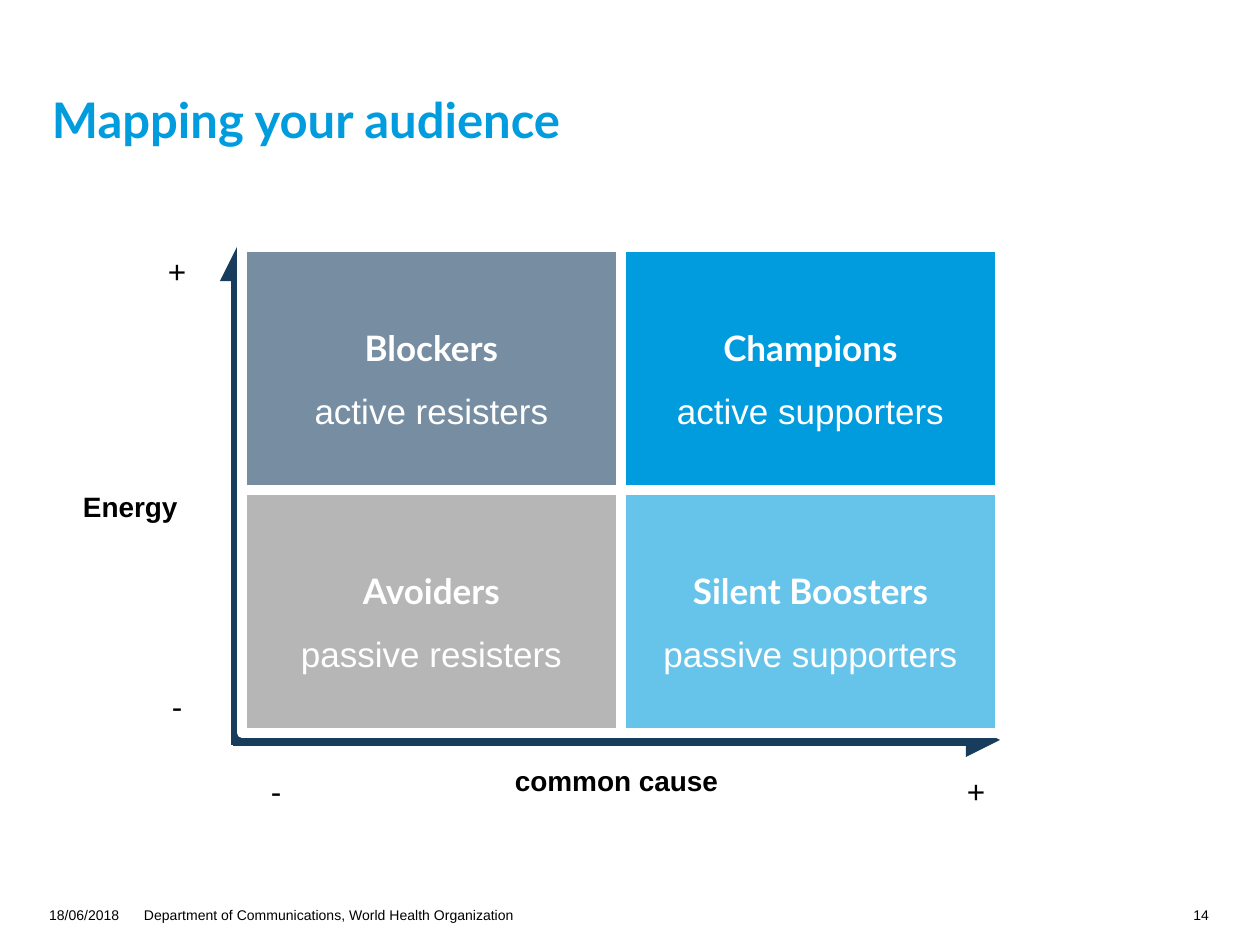
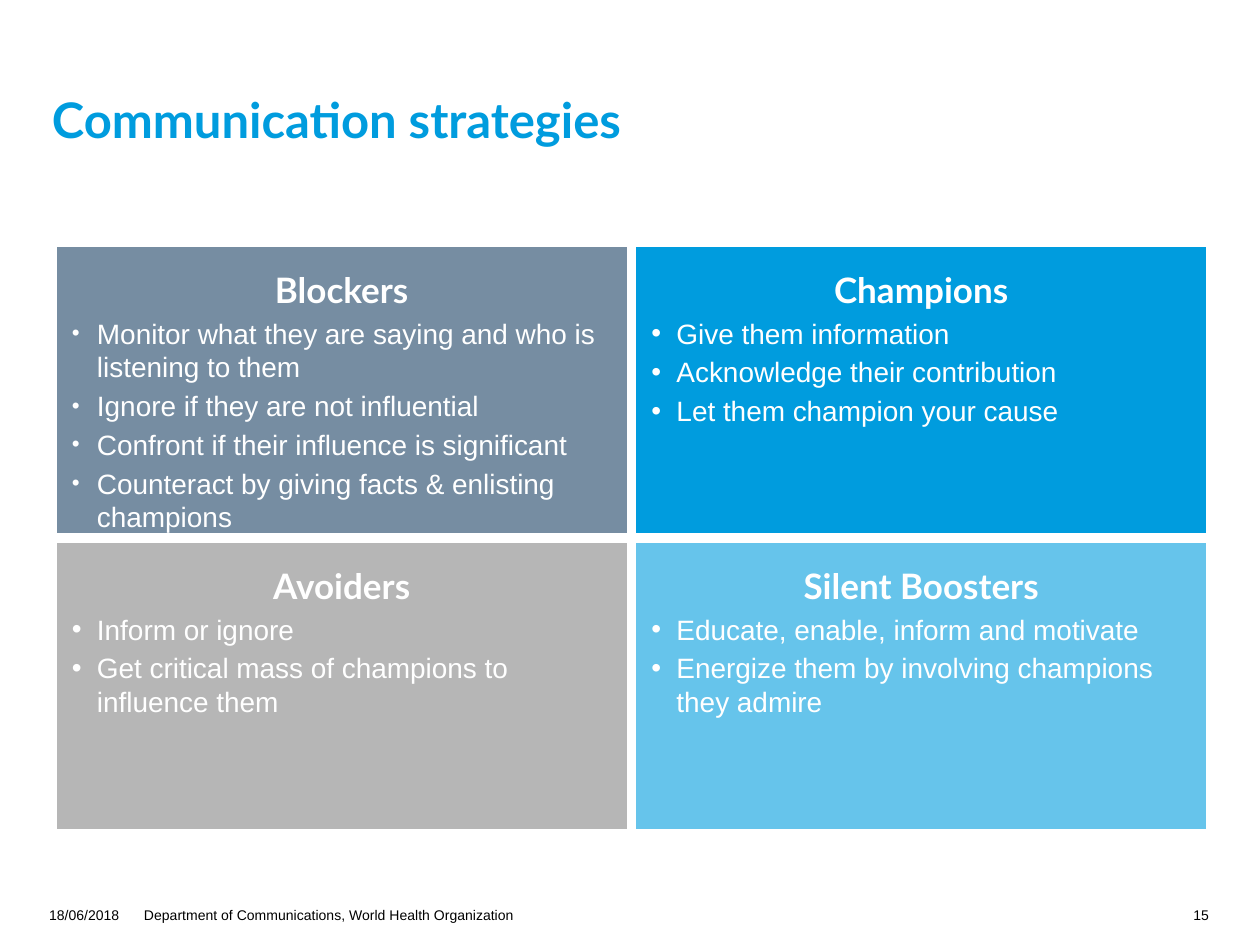
import lxml.etree
import pptx
import pptx.dml.color
import pptx.enum.shapes
import pptx.enum.text
import pptx.oxml.ns
import pptx.util

PIXELS_PER_INCH = 126
BLUE, NAVY, WHITE, BLACK = "009CDE", "183C5C", "FFFFFF", "000000"
HEADING_FONT, BODY_FONT = "Lato", "Arial"
ALIGN = pptx.enum.text.PP_ALIGN
ANCHOR = pptx.enum.text.MSO_ANCHOR
GROUPS = [
    {"name": "Blockers", "colour": "768DA2", "attitude": "active resisters",
     "bullet_percent": 80, "list_height": 229,
     "strategies": ["Monitor what they are saying and who is listening to them",
                    "Ignore if they are not influential",
                    "Confront if their influence is significant",
                    "Counteract by giving facts & enlisting champions"]},
    {"name": "Champions", "colour": BLUE, "attitude": "active supporters",
     "bullet_percent": 100, "list_height": 122,
     "strategies": ["Give them information", "Acknowledge their contribution",
                    "Let them champion your cause"]},
    {"name": "Avoiders", "colour": "B6B6B6", "attitude": "passive resisters",
     "bullet_percent": 100, "list_height": 117,
     "strategies": ["Inform or ignore",
                    "Get critical mass of champions to influence them"]},
    {"name": "Silent Boosters", "colour": "66C4EB", "attitude": "passive supporters",
     "bullet_percent": 100, "list_height": 117,
     "strategies": ["Educate, enable, inform and motivate",
                    "Energize them by involving champions they admire"]},
]


def px(length):
    """Turn pixels into EMU."""
    return pptx.util.Emu(round(length * pptx.util.Inches(1) / PIXELS_PER_INCH))


def rgb(colour):
    """Turn a hex string into a colour."""
    return pptx.dml.color.RGBColor.from_string(colour)


def add_child(parent, tag, **attributes):
    """Append a drawing element to an XML parent."""
    return lxml.etree.SubElement(parent, pptx.oxml.ns.qn(tag), attributes)


def place(shape, box):
    """Move and size a shape to a pixel box."""
    shape.left, shape.top, shape.width, shape.height = map(px, box)


def set_frame(shape, insets, anchor=ANCHOR.TOP):
    """Set the wrapping, insets and anchor of a shape's text."""
    frame = shape.text_frame
    frame.word_wrap = True
    frame.auto_size = pptx.enum.text.MSO_AUTO_SIZE.NONE
    frame.vertical_anchor = anchor
    (frame.margin_left, frame.margin_top,
     frame.margin_right, frame.margin_bottom) = map(px, insets)


def write(shape, text, size=16, font=BODY_FONT, colour=BLACK, bold=False,
          align=ALIGN.LEFT, line_spacing=1.0, space_before=0, bullet_percent=None):
    """Write one formatted paragraph into a shape."""
    frame = shape.text_frame
    first = not frame.text
    paragraph = frame.paragraphs[0] if first else frame.add_paragraph()
    paragraph.alignment = align
    paragraph.line_spacing = line_spacing
    paragraph.space_before = pptx.util.Pt(0 if first else space_before)
    if bullet_percent:
        add_bullet(paragraph, bullet_percent, colour)
    run = paragraph.add_run()
    run.text = text
    run.font.size = pptx.util.Pt(size)
    run.font.name = font
    run.font.bold = bold
    run.font.color.rgb = rgb(colour)


def add_bullet(paragraph, percent, colour):
    """Give a paragraph a round bullet with a hanging indent."""
    properties = paragraph._p.get_or_add_pPr()
    properties.set("marL", str(px(25)))
    properties.set("indent", str(px(-25)))
    add_child(add_child(properties, "a:buClr"), "a:srgbClr", val=colour)
    add_child(properties, "a:buSzPct", val=str(percent * 1000))
    add_child(properties, "a:buFont", typeface=BODY_FONT)
    add_child(properties, "a:buChar", char="•")


def add_label(slide, box, text, insets=(11, 5, 11, 5), **text_format):
    """Add a text box with one paragraph."""
    label = slide.shapes.add_textbox(*map(px, box))
    set_frame(label, insets)
    write(label, text, **text_format)


def add_slide(presentation, layout_index, title, number):
    """Add a slide with its title and footer."""
    slide = presentation.slides.add_slide(presentation.slide_layouts[layout_index])
    heading = slide.shapes.title
    place(heading, (49, 49, 843, 100))
    set_frame(heading, (3, 0, 49, 0), ANCHOR.BOTTOM)
    write(heading, title, size=28, font=HEADING_FONT, colour=BLUE, bold=True,
          line_spacing=0.9)
    footers = [(49, 82, "18/06/2018", ALIGN.LEFT),
               (144, 539, "Department of Communications, World Health Organization",
                ALIGN.LEFT),
               (1179, 30, str(number), ALIGN.RIGHT)]
    for left, width, text, align in footers:
        add_label(slide, (left, 907, width, 25), text, insets=(0, 0, 0, 0),
                  size=8, align=align)
    return slide


def add_axis(slide, start, end):
    """Add a thick axis with an arrowhead at its end."""
    axis = slide.shapes.add_connector(
        pptx.enum.shapes.MSO_CONNECTOR.STRAIGHT, *map(px, start + end))
    axis.line.color.rgb = rgb(NAVY)
    axis.line.width = pptx.util.Pt(6.5)
    add_child(axis.line._get_or_add_ln(), "a:tailEnd", type="triangle")
    add_child(axis._element.spPr, "a:effectLst")


def add_quadrants(slide, box, anchor):
    """Fill a box with the named groups, two by two, and return their cells."""
    left, top, width, height = box
    cell_width, cell_height = width / 2, height / 2
    cells = []
    for index, group in enumerate(GROUPS):
        row, column = divmod(index, 2)
        cell = slide.shapes.add_shape(
            pptx.enum.shapes.MSO_SHAPE.RECTANGLE,
            px(left + column * cell_width), px(top + row * cell_height),
            px(cell_width), px(cell_height))
        cell.shadow.inherit = False
        cell.fill.solid()
        cell.fill.fore_color.rgb = rgb(group["colour"])
        cell.line.color.rgb = rgb(WHITE)
        cell.line.width = pptx.util.Pt(5.25)
        set_frame(cell, (13, 6, 13, 6), anchor)
        write(cell, group["name"], size=20, font=HEADING_FONT, colour=WHITE,
              bold=True, align=ALIGN.CENTER, line_spacing=1.5)
        cells.append(cell)
    return cells


def add_audience_map(slide, box):
    """Draw the quadrants in a box with both axes and their labels."""
    left, top, width, height = box
    right, bottom = left + width, top + height
    add_axis(slide, (left - 5, bottom + 12), (left - 5, top))
    add_axis(slide, (left - 9, bottom + 7), (right, bottom + 7))
    add_label(slide, (left - 170, top + 238, 165, 71), "Energy", bold=True)
    add_label(slide, (left + 229, bottom + 26, 291, 71), "common cause",
              bold=True, align=ALIGN.CENTER)
    for cell, group in zip(add_quadrants(slide, box, ANCHOR.MIDDLE), GROUPS):
        write(cell, group["attitude"], size=20, colour=WHITE,
              align=ALIGN.CENTER, line_spacing=1.5)
    signs = [("-", left - 87, bottom - 51), ("-", left + 12, bottom + 34),
             ("+", right - 46, bottom + 34), ("+", left - 87, top)]
    for sign, sign_left, sign_top in signs:
        add_label(slide, (sign_left, sign_top, 44, 50), sign, size=18,
                  align=ALIGN.CENTER)


def add_strategy_lists(slide, box):
    """Draw the quadrants in a box and lay a bulleted list over each."""
    cells = add_quadrants(slide, box, ANCHOR.TOP)
    bodies = [body for body in slide.placeholders if body.placeholder_format.idx]
    for cell, group, body in zip(cells, GROUPS, bodies):
        cell._element.getparent().append(body._element)
        place(body, (0, 0, 576, group["list_height"]))
        body.left, body.top = cell.left, cell.top + px(64)
        set_frame(body, (20, 10, 10, 5))
        for strategy in group["strategies"]:
            write(body, strategy, colour=WHITE, space_before=3,
                  bullet_percent=group["bullet_percent"])


def main():
    """Build and save both slides."""
    presentation = pptx.Presentation()
    presentation.slide_width, presentation.slide_height = px(1260), px(945)
    audience_slide = add_slide(presentation, 5, "Mapping your audience", 14)
    add_audience_map(audience_slide, (242, 247, 758, 486))
    strategy_slide = add_slide(presentation, 4, "Communication strategies", 15)
    add_strategy_lists(strategy_slide, (52, 242, 1159, 592))
    presentation.save("out.pptx")


if __name__ == "__main__":
    main()
